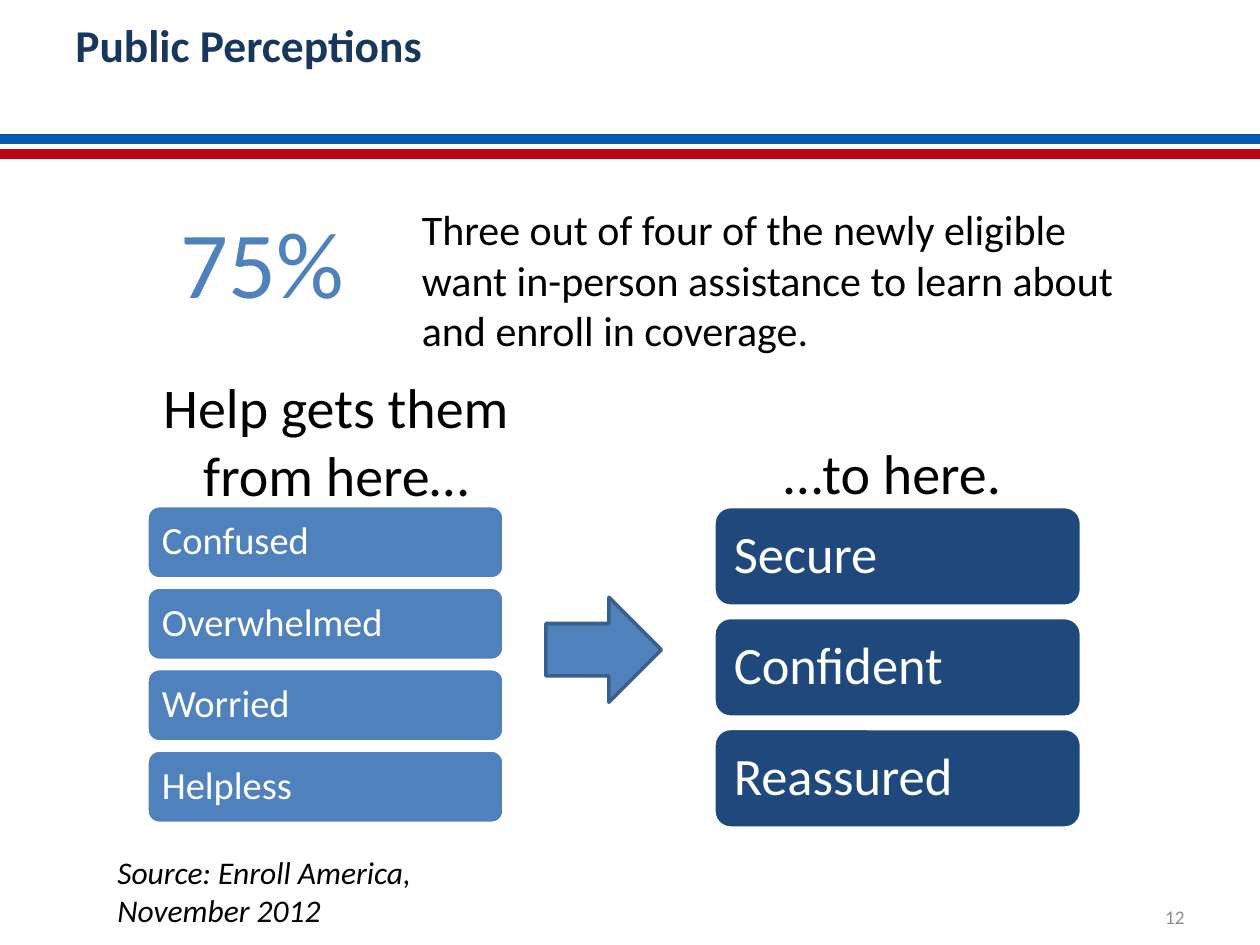
from pptx import Presentation
from pptx.dml.color import RGBColor
from pptx.enum import shapes, text
from pptx.util import Pt

FONT = "Calibri"
COLORS = {
    "stripe_blue": "0058B0",
    "stripe_red": "BB0512",
    "white": "FFFFFF",
    "black": "000000",
    "title": "17375E",
    "blue": "4F81BD",
    "arrow_line": "3A5F8C",
    "navy": "1F497D",
    "gray": "8C8C8C",
}
STRIPES = [(77.8, "stripe_blue"), (84.2, "white"), (86.4, "stripe_red")]
BEFORE = ["Confused", "Overwhelmed", "Worried", "Helpless"]
AFTER = ["Secure", "Confident", "Reassured"]


def color(name):
    return RGBColor.from_string(COLORS[name])


def write(box, words, size, tint, align=text.PP_ALIGN.LEFT,
          anchor=text.MSO_ANCHOR.TOP, bold=False, italic=False):
    frame = box.text_frame
    frame.text = words
    frame.word_wrap = True
    frame.vertical_anchor = anchor
    para = frame.paragraphs[0]
    para.alignment = align
    for span in para.runs:
        span.font.name = FONT
        span.font.size = Pt(size)
        span.font.bold = bold
        span.font.italic = italic
        span.font.color.rgb = color(tint)


def add_text(page, place, words, size, tint, **style):
    box = page.shapes.add_textbox(*map(Pt, place))
    write(box, words, size, tint, **style)


def add_block(page, kind, place, fill, line):
    block = page.shapes.add_shape(kind, *map(Pt, place))
    block.shadow.inherit = False
    block.fill.solid()
    block.fill.fore_color.rgb = color(fill)
    block.line.color.rgb = color(line)
    block.line.width = Pt(2)
    return block


def add_stack(page, words, left, top, width, height, pitch, fill, size, margin):
    for index, word in enumerate(words):
        place = (left, top + index * pitch, width, height)
        card = add_block(page, shapes.MSO_SHAPE.ROUNDED_RECTANGLE, place, fill, "white")
        write(card, word, size, "white", anchor=text.MSO_ANCHOR.MIDDLE)
        frame = card.text_frame
        frame.margin_left = frame.margin_right = Pt(margin)
        frame.margin_top = frame.margin_bottom = Pt(margin)
        frame.paragraphs[0].line_spacing = 0.9


def main():
    deck = Presentation()
    deck.slide_width, deck.slide_height = Pt(720), Pt(540)
    page = deck.slides.add_slide(deck.slide_layouts[6])
    center = text.PP_ALIGN.CENTER

    for top, tint in STRIPES:
        add_block(page, shapes.MSO_SHAPE.RECTANGLE, (0, top, 720, 3.6), tint, tint)
    add_text(page, (36, 6, 648, 90), "Public Perceptions", 26, "title", bold=True)

    add_text(page, (96, 113, 138, 73), "75%", 54, "blue")
    add_text(page, (234, 113, 432, 94),
             "Three out of four of the newly eligible want in-person assistance "
             "to learn about and enroll in coverage.", 24, "black")

    add_text(page, (72, 209.5, 240, 85), "Help gets them from here…", 32, "black",
             align=center)
    add_text(page, (426, 247, 168, 46), "…to here.", 32, "black", align=center)
    add_stack(page, BEFORE, 84, 289, 204, 41.8, 46.55, "blue", 22, 6.5)
    add_block(page, shapes.MSO_SHAPE.RIGHT_ARROW, (312, 341.3, 66, 60),
              "blue", "arrow_line")
    add_stack(page, AFTER, 408, 289.5, 210, 56.9, 63.4, "navy", 30, 8.6)

    add_text(page, (60, 484, 252, 51), "Source: Enroll America, November 2012",
             18, "black", italic=True)
    add_text(page, (516, 511, 168, 25.5), "12", 11, "gray",
             align=text.PP_ALIGN.RIGHT, anchor=text.MSO_ANCHOR.MIDDLE)

    deck.save("out.pptx")


if __name__ == "__main__":
    main()
